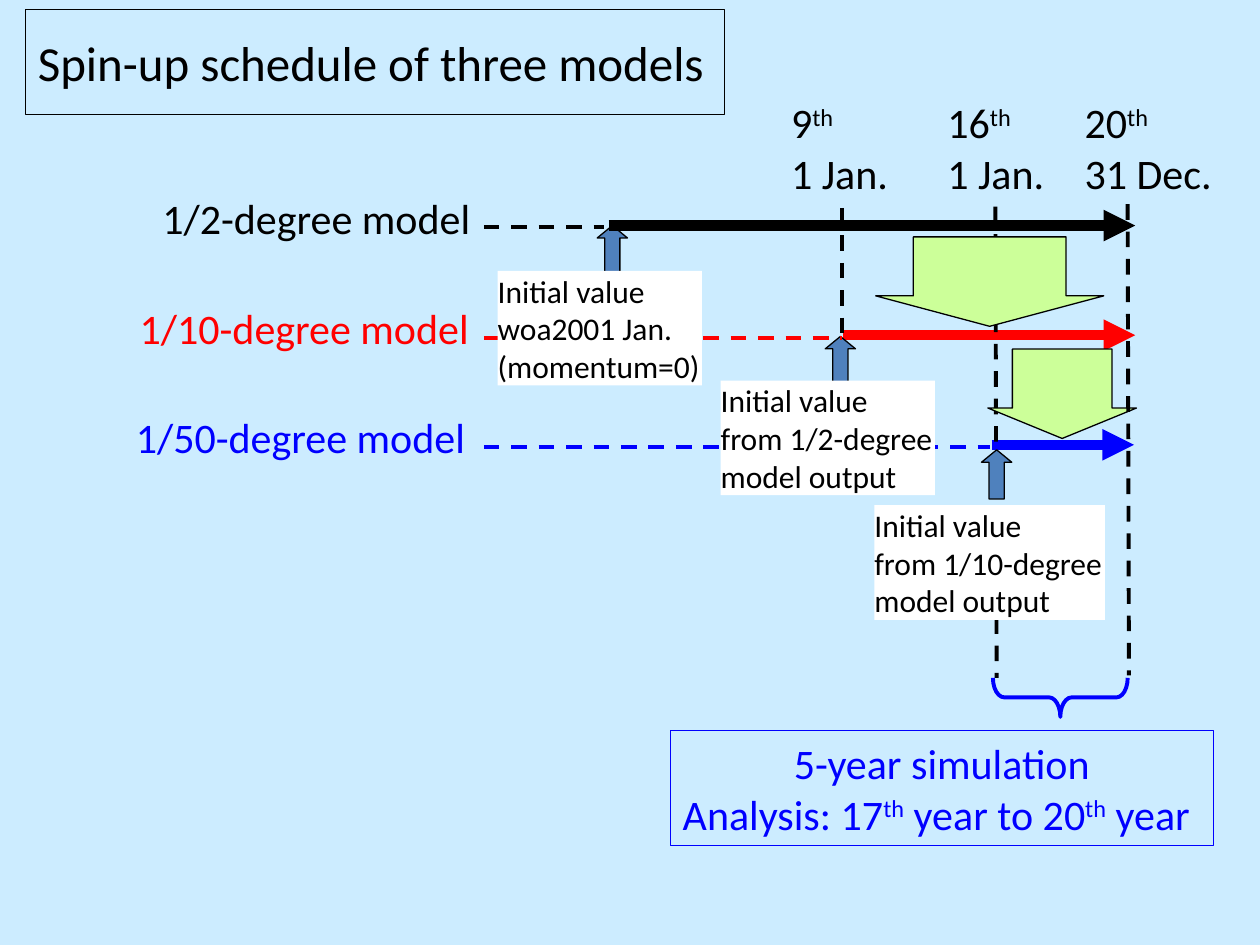
from lxml import etree
from pptx import Presentation
from pptx.dml.color import RGBColor
from pptx.enum.dml import MSO_LINE
from pptx.enum.shapes import MSO_CONNECTOR, MSO_SHAPE
from pptx.enum.text import MSO_AUTO_SIZE, PP_ALIGN
from pptx.oxml.ns import qn
from pptx.util import Inches, Pt

RECTANGLE = MSO_SHAPE.RECTANGLE
UP_ARROW = MSO_SHAPE.UP_ARROW
DOWN_ARROW = MSO_SHAPE.DOWN_ARROW
RIGHT_BRACE = MSO_SHAPE.RIGHT_BRACE
STRAIGHT = MSO_CONNECTOR.STRAIGHT
DASH = MSO_LINE.DASH
FIT_SHAPE = MSO_AUTO_SIZE.SHAPE_TO_FIT_TEXT
LEFT, CENTER = PP_ALIGN.LEFT, PP_ALIGN.CENTER

BLACK, RED, BLUE, WHITE = "000000", "FF0000", "0000FF", "FFFFFF"
SKY, STEEL, LIME = "CCECFF", "4F81BD", "CCFF99"
SUPERSCRIPT = "th"


def rgb(value):
    return RGBColor.from_string(value)


class ScheduleSlide:
    """Draws the schedule elements on one slide in a shared style."""

    font = "Calibri"
    thin, medium, thick = 0.75, 2.25, 6

    def __init__(self, deck):
        self.page = deck.slides.add_slide(deck.slide_layouts[5])
        self.page.background.fill.solid()
        self.page.background.fill.fore_color.rgb = rgb(SKY)

    def add_text(self, box, lines, size, color, aligns=(), inset=None):
        frame = box.text_frame
        frame.word_wrap = False
        frame.auto_size = FIT_SHAPE
        if inset is not None:
            frame.margin_left = frame.margin_right = Inches(inset)
            frame.margin_top = frame.margin_bottom = Inches(inset)
        for index, runs in enumerate(lines):
            para = frame.add_paragraph() if index else frame.paragraphs[0]
            para.alignment = aligns[index] if aligns else LEFT
            for text in runs:
                span = para.add_run()
                span.text = text
                span.font.name = self.font
                span.font.size = Pt(size)
                span.font.color.rgb = rgb(color)
                if text == SUPERSCRIPT:
                    span.font._element.set("baseline", "30000")

    def outline(self, shape, color, width):
        shape.line.color.rgb = rgb(color)
        shape.line.width = Pt(width)

    def title(self, text, *place):
        box = self.page.shapes.title
        box.left, box.top, box.width, box.height = map(Inches, place)
        self.outline(box, BLACK, self.thin)
        self.add_text(box, [[text]], 28, BLACK)

    def label(self, lines, place, color=BLACK):
        box = self.page.shapes.add_textbox(*map(Inches, place))
        self.add_text(box, lines, 24, color)

    def shape(self, kind, place, fill=None, line=None, width=thin, adjust=()):
        shape = self.page.shapes.add_shape(kind, *map(Inches, place))
        shape.shadow.inherit = False
        if fill:
            shape.fill.solid()
            shape.fill.fore_color.rgb = rgb(fill)
        else:
            shape.fill.background()
        if line:
            self.outline(shape, line, width)
        else:
            shape.line.fill.background()
        for index, value in enumerate(adjust):
            shape.adjustments[index] = value
        return shape

    def note(self, lines, left, top, width):
        box = self.shape(RECTANGLE, (left, top, width, 0.91), WHITE)
        self.add_text(box, [[line] for line in lines], 18, BLACK, inset=0)

    def start_arrow(self, left, top):
        self.shape(UP_ARROW, (left, top, 0.24, 0.39), STEEL, BLACK, adjust=(0.5, 0.41))

    def handover(self, left, top, width):
        self.shape(DOWN_ARROW, (left, top, width, 0.71), LIME, BLACK, adjust=(0.67, 0.34))

    def connector(self, ends, color, width):
        line = self.page.shapes.add_connector(STRAIGHT, *map(Inches, ends))
        self.outline(line, color, width)
        etree.SubElement(line._element.spPr, qn("a:effectLst"))
        return line

    def dashed(self, ends, color=BLACK):
        self.connector(ends, color, self.medium).line.dash_style = DASH

    def run_arrow(self, start, end, level, color):
        line = self.connector((start, level, end, level), color, self.thick)
        tail = etree.SubElement(line.line._get_or_add_ln(), qn("a:tailEnd"))
        tail.set("type", "triangle")

    def brace(self, *place):
        shape = self.shape(RIGHT_BRACE, place, line=BLUE, width=self.medium, adjust=(0.29, 0.5))
        shape.rotation = 90

    def summary(self, lines, place):
        box = self.shape(RECTANGLE, place, line=BLUE)
        self.add_text(box, lines, 24, BLUE, (CENTER, LEFT))


def main():
    deck = Presentation()
    deck.slide_width, deck.slide_height = Inches(10), Inches(7.5)
    slide = ScheduleSlide(deck)
    slide.title("Spin-up schedule of three models", 0.2, 0.21, 5.55, 0.57)

    models = [
        ("1/2-degree model", 1.19, 1.48, 2.67, BLACK),
        ("1/10-degree model", 1.01, 2.35, 2.84, RED),
        ("1/50-degree model", 0.98, 3.22, 2.84, BLUE),
    ]
    for name, left, top, width, color in models:
        slide.label([[name]], (left, top, width, 0.5), color)

    dates = [
        ("9", "1 Jan.", 6.18, 0.99),
        ("16", "1 Jan.", 7.42, 0.99),
        ("20", "31 Dec.", 8.51, 1.25),
    ]
    for year, day, left, width in dates:
        slide.label([[year, SUPERSCRIPT], [day]], (left, 0.72, width, 0.91))

    slide.run_arrow(6.69, 9.01, 2.66, RED)
    slide.run_arrow(7.87, 9, 3.53, BLUE)
    slide.dashed((6.68, 1.65, 6.68, 2.83))
    slide.dashed((7.9, 1.64, 7.91, 5.38))
    for left, top in [(4.74, 1.79), (6.55, 2.67), (7.79, 3.57)]:
        slide.start_arrow(left, top)
    slide.run_arrow(4.83, 9.01, 1.79, BLACK)
    slide.handover(6.95, 1.88, 1.81)
    slide.handover(7.84, 2.77, 1.18)

    for end, level, color in [(4.79, 1.8, BLACK), (6.68, 2.68, RED), (7.86, 3.55, BLUE)]:
        slide.dashed((3.84, level, end, level), color)
    slide.note(["Initial value", "woa2001 Jan.", "(momentum=0)"], 3.95, 2.15, 1.62)
    slide.note(["Initial value", "from 1/10-degree", "model output"], 6.94, 4.01, 1.83)
    slide.note(["Initial value", "from 1/2-degree", "model output"], 5.72, 3.02, 1.7)

    analysis = ["Analysis: 17", SUPERSCRIPT, " year to 20", SUPERSCRIPT, " year"]
    slide.summary([["5-year simulation"], analysis], (5.32, 5.8, 4.31, 0.91))
    slide.dashed((8.95, 1.62, 8.96, 5.36))
    slide.brace(8.26, 5, 0.31, 1.07)
    deck.save("out.pptx")


if __name__ == "__main__":
    main()
